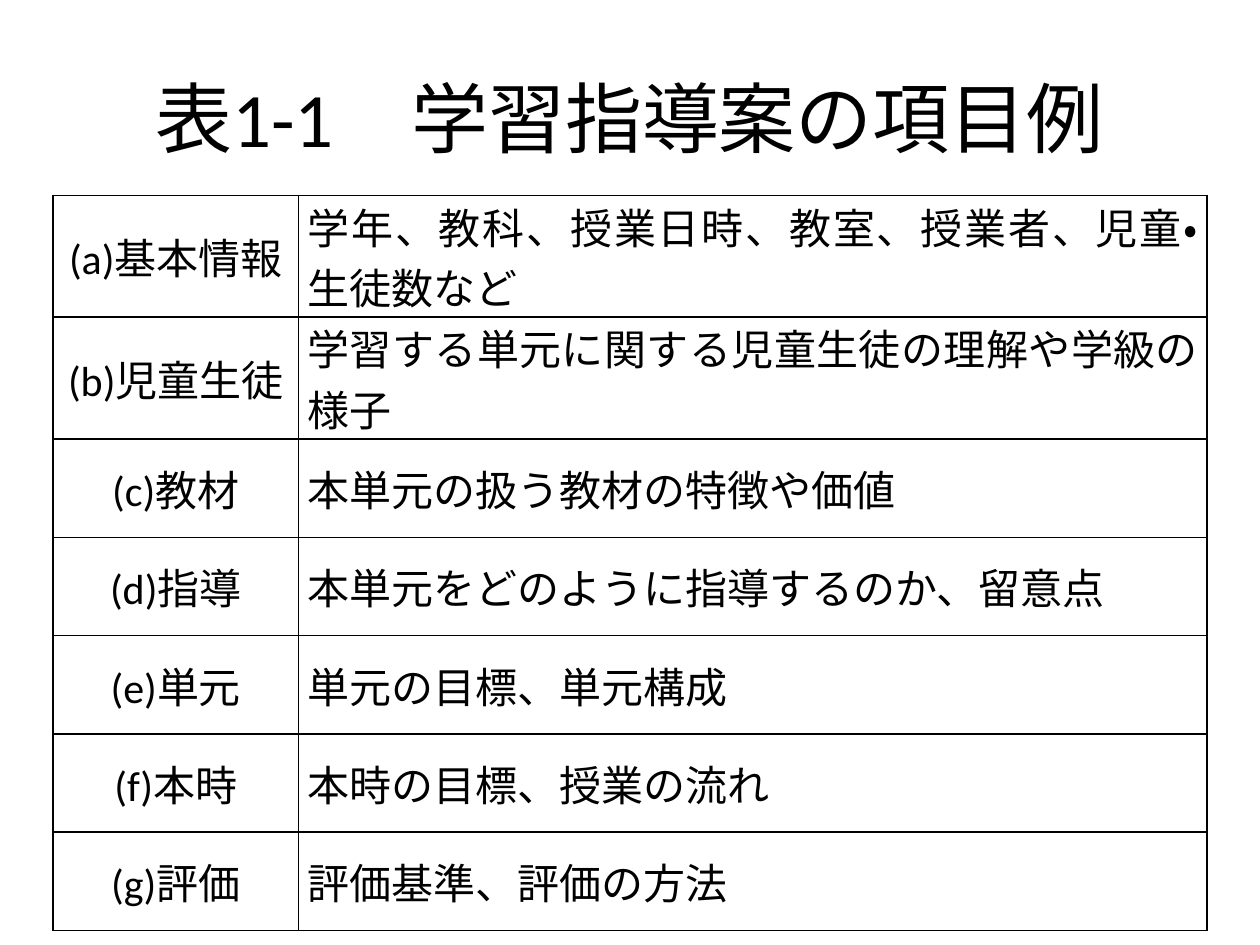
import pptx
import pptx.util
import pptx.dml.color
import pptx.enum.lang
import pptx.enum.text
import pptx.oxml
import pptx.oxml.ns
from pptx.util import Inches

ALIGN = pptx.enum.text.PP_ALIGN
MIDDLE = pptx.enum.text.MSO_ANCHOR.MIDDLE
BLACK = "000000"


def format_text(paragraph, size, alignment):
    paragraph.alignment = alignment
    for run in paragraph.runs:
        run.font.name = "Calibri"
        run.font.size = pptx.util.Pt(size)
        run.font.bold = False
        run.font.language_id = pptx.enum.lang.MSO_LANGUAGE_ID.JAPANESE
        run.font.color.rgb = pptx.dml.color.RGBColor.from_string(BLACK)


def add_borders(cell, color, width):
    """Draw a solid line of the given width in points on all four sides."""
    properties = cell._tc.get_or_add_tcPr()
    for side in ("lnL", "lnR", "lnT", "lnB"):
        properties.append(pptx.oxml.parse_xml(
            f'<a:{side} {pptx.oxml.ns.nsdecls("a")} w="{pptx.util.Pt(width)}">'
            f'<a:solidFill><a:srgbClr val="{color}"/></a:solidFill></a:{side}>'))


plan_items = [
    ("(a)基本情報", "学年、教科、授業日時、教室、授業者、児童・生徒数など"),
    ("(b)児童生徒", "学習する単元に関する児童生徒の理解や学級の様子"),
    ("(c)教材", "本単元の扱う教材の特徴や価値"),
    ("(d)指導", "本単元をどのように指導するのか、留意点"),
    ("(e)単元", "単元の目標、単元構成"),
    ("(f)本時", "本時の目標、授業の流れ"),
    ("(g)評価", "評価基準、評価の方法"),
]
column_widths = [1.95, 7.21]
row_heights = [0.95, 0.92] + [0.78] * 5

presentation = pptx.Presentation()
presentation.slide_width = Inches(10)
presentation.slide_height = Inches(7.5)
slide = presentation.slides.add_slide(presentation.slide_layouts[5])

title = slide.shapes.title
title.left, title.top = Inches(0.5), Inches(0.3)
title.width, title.height = Inches(9), Inches(1.25)
title.text_frame.text = "表1-1\u3000学習指導案の項目例".replace("\u3000", "　")
title.text_frame.vertical_anchor = MIDDLE
format_text(title.text_frame.paragraphs[0], 44, ALIGN.CENTER)

plan_table = slide.shapes.add_table(
    len(plan_items), len(column_widths), Inches(0.42), Inches(1.55),
    Inches(sum(column_widths)), Inches(sum(row_heights))).table
plan_table.first_row = False
plan_table.horz_banding = False
for column, width in zip(plan_table.columns, column_widths):
    column.width = Inches(width)

for row, height, item in zip(plan_table.rows, row_heights, plan_items):
    row.height = Inches(height)
    for cell, text, alignment in zip(row.cells, item, (ALIGN.CENTER, ALIGN.JUSTIFY)):
        cell.text_frame.text = text
        format_text(cell.text_frame.paragraphs[0], 24, alignment)
        cell.vertical_anchor = MIDDLE
        cell.margin_left = cell.margin_right = Inches(0.07)
        cell.margin_top = cell.margin_bottom = 0
        add_borders(cell, BLACK, 1)
        cell.fill.background()

presentation.save("out.pptx")
